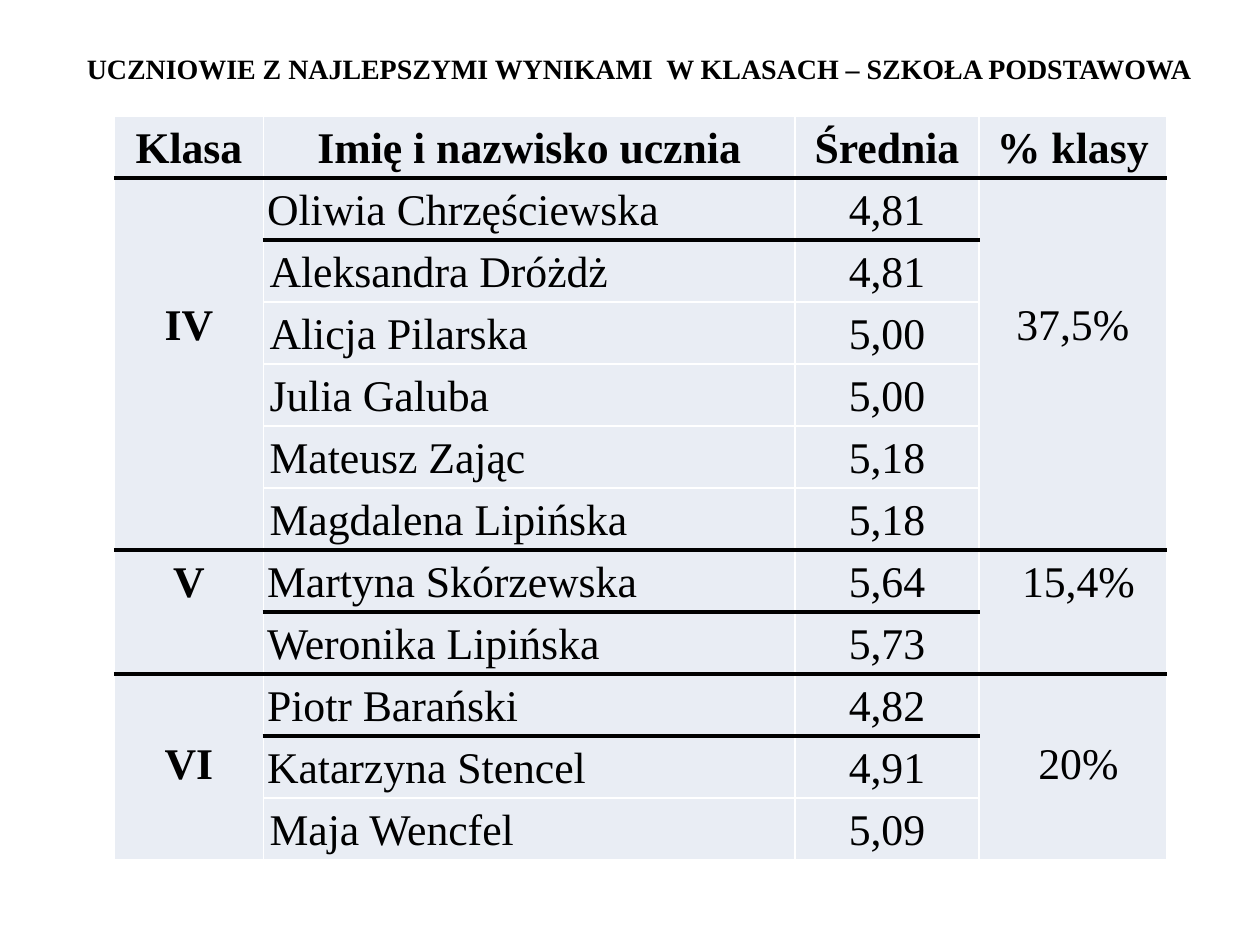
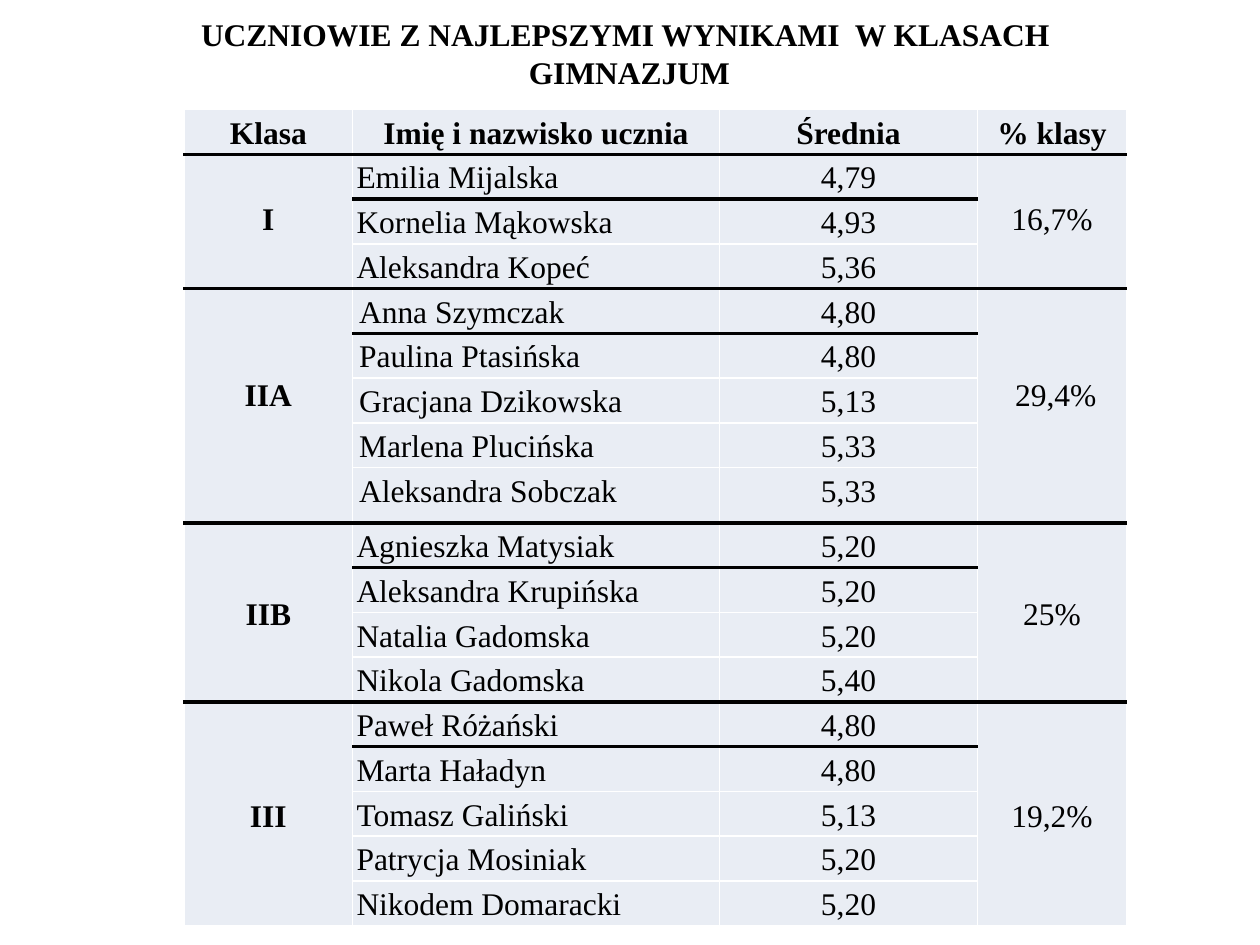
import dataclasses

import pptx
import pptx.dml.color
import pptx.enum.text
import pptx.oxml.ns
import pptx.util
from lxml import etree
from pptx.util import Inches, Pt

BLACK = pptx.dml.color.RGBColor(0x00, 0x00, 0x00)
WHITE = pptx.dml.color.RGBColor(0xFF, 0xFF, 0xFF)
CELL_FILL = pptx.dml.color.RGBColor(0xE9, 0xED, 0xF4)
FONT = "Times New Roman"
LINE_SPACING = 1.15
THIN, THICK = (WHITE, 1), (BLACK, 2.25)
HEADINGS = ["Klasa", "Imię i nazwisko ucznia", "Średnia", "% klasy"]
CENTER = pptx.enum.text.PP_ALIGN.CENTER
LEFT = pptx.enum.text.PP_ALIGN.LEFT
TOP = pptx.enum.text.MSO_ANCHOR.TOP
MIDDLE = pptx.enum.text.MSO_ANCHOR.MIDDLE


@dataclasses.dataclass
class SchoolClass:
    """One class; lines_above=None centres its label in the merged cell."""
    name: str
    percent: str
    students: list
    lines_above: int | None = None
    percent_shift: float = 0
    indented: range = range(0)


PRIMARY = [
    SchoolClass("IV", "37,5%", [
        ("Oliwia Chrzęściewska", "4,81"),
        ("Aleksandra Dróżdż", "4,81"),
        ("Alicja Pilarska", "5,00"),
        ("Julia Galuba", "5,00"),
        ("Mateusz Zając", "5,18"),
        ("Magdalena Lipińska", "5,18"),
    ], lines_above=2, indented=range(1, 6)),
    SchoolClass("V", "15,4%", [
        ("Martyna Skórzewska", "5,64"),
        ("Weronika Lipińska", "5,73"),
    ], lines_above=0, percent_shift=0.09),
    SchoolClass("VI", "20%", [
        ("Piotr Barański", "4,82"),
        ("Katarzyna Stencel", "4,91"),
        ("Maja Wencfel", "5,09"),
    ], lines_above=1, percent_shift=0.09, indented=range(2, 3)),
]

LOWER_SECONDARY = [
    SchoolClass("I", "16,7%", [
        ("Emilia Mijalska", "4,79"),
        ("Kornelia Mąkowska", "4,93"),
        ("Aleksandra Kopeć", "5,36"),
    ], lines_above=1),
    SchoolClass("IIA", "29,4%", [
        ("Anna Szymczak", "4,80"),
        ("Paulina Ptasińska", "4,80"),
        ("Gracjana Dzikowska", "5,13"),
        ("Marlena Plucińska", "5,33"),
        ("Aleksandra Sobczak", "5,33"),
    ], lines_above=2, percent_shift=0.06, indented=range(5)),
    SchoolClass("IIB", "25%", [
        ("Agnieszka Matysiak", "5,20"),
        ("Aleksandra Krupińska", "5,20"),
        ("Natalia Gadomska", "5,20"),
        ("Nikola Gadomska", "5,40"),
    ]),
    SchoolClass("III", "19,2%", [
        ("Paweł Różański", "4,80"),
        ("Marta Haładyn", "4,80"),
        ("Tomasz Galiński", "5,13"),
        ("Patrycja Mosiniak", "5,20"),
        ("Nikodem Domaracki", "5,20"),
    ]),
]


def add_span(para, text, size, bold):
    span = para.add_run()
    span.text = text
    span.font.name = FONT
    span.font.size = Pt(size)
    span.font.bold = bold
    span.font.color.rgb = BLACK


def add_title(page, lines, place, size):
    box = page.shapes.add_textbox(*map(Inches, place))
    frame = box.text_frame
    frame.word_wrap = True
    frame.auto_size = pptx.enum.text.MSO_AUTO_SIZE.SHAPE_TO_FIT_TEXT
    for index, line in enumerate(lines):
        para = frame.add_paragraph() if index else frame.paragraphs[0]
        para.alignment = CENTER
        add_span(para, line, size, True)


def style_cell(cell, top=THIN, bottom=THIN):
    """Draw the four borders, then fill the cell."""
    qn = pptx.oxml.ns.qn
    properties = cell._tc.get_or_add_tcPr()
    for side, (color, width) in zip("LRTB", (THIN, THIN, top, bottom)):
        line = etree.SubElement(properties, qn(f"a:ln{side}"), w=str(Pt(width)))
        fill = etree.SubElement(line, qn("a:solidFill"))
        etree.SubElement(fill, qn("a:srgbClr"), val=str(color))
    cell.fill.solid()
    cell.fill.fore_color.rgb = CELL_FILL


def write_cell(cell, text, size, bold=False, align=CENTER, anchor=TOP,
               side=0.03, above=0.01, shift=0):
    cell.margin_left = Inches(side + shift)
    cell.margin_right = Inches(side)
    cell.margin_top = Inches(above)
    cell.margin_bottom = 0
    cell.vertical_anchor = anchor
    para = cell.text_frame.paragraphs[0]
    para.alignment = align
    para.line_spacing = LINE_SPACING
    add_span(para, text, size, bold)


def add_merged_label(table, column, first, last, text, size, lines_above,
                     bottom, bold=False, shift=0):
    """Merge the rows of a class in one column and place its label."""
    table.cell(first, column).merge(table.cell(last, column))
    for row in range(first, last + 1):
        style_cell(table.cell(row, column),
                   THICK if row == first else THIN,
                   bottom if row in (first, last) else THIN)
    label = table.cell(first, column)
    if lines_above is None:
        write_cell(label, text, size, bold, anchor=MIDDLE, side=0, above=0)
    else:
        line_height = size * 1.15 * LINE_SPACING / 72
        write_cell(label, text, size, bold, shift=shift,
                   above=0.01 + lines_above * line_height)


def add_class(table, first, school_class, size, is_last_class):
    last = first + len(school_class.students) - 1
    closing = THIN if is_last_class else THICK
    for index, (student, average) in enumerate(school_class.students):
        row = first + index
        top = THICK if index < 2 else THIN
        bottom = THICK if index == 0 else closing if row == last else THIN
        side = 0.05 if index in school_class.indented else 0.03
        for column, text, align in ((1, student, LEFT), (2, average, CENTER)):
            cell = table.cell(row, column)
            style_cell(cell, top, bottom)
            write_cell(cell, text, size, align=align, side=side)
    add_merged_label(table, 0, first, last, school_class.name, size,
                     school_class.lines_above, closing, bold=True)
    add_merged_label(table, 3, first, last, school_class.percent, size,
                     school_class.lines_above, closing,
                     shift=school_class.percent_shift)


def add_results_table(page, classes, place, widths, size, tall_rows=None):
    """Add the table; tall_rows maps a row to its height, the rest are equal."""
    tall_rows = tall_rows or {}
    row_count = 1 + sum(len(school_class.students) for school_class in classes)
    table = page.shapes.add_table(row_count, len(HEADINGS),
                                  *map(Inches, place)).table
    table.first_row = table.horz_banding = False
    for column, width in zip(table.columns, widths):
        column.width = Inches(width)
    common = (place[3] - sum(tall_rows.values())) / (row_count - len(tall_rows))
    for index, row in enumerate(table.rows):
        row.height = Inches(tall_rows.get(index, common))
    for column, heading in enumerate(HEADINGS):
        style_cell(table.cell(0, column), bottom=THICK)
        write_cell(table.cell(0, column), heading, size, bold=True)
    first = 1
    for school_class in classes:
        add_class(table, first, school_class, size, school_class is classes[-1])
        first += len(school_class.students)


def main():
    deck = pptx.Presentation()
    deck.slide_width, deck.slide_height = Inches(10), Inches(7.5)
    blank = deck.slide_layouts[6]

    page = deck.slides.add_slide(blank)
    add_title(page, ["UCZNIOWIE Z NAJLEPSZYMI WYNIKAMI  W KLASACH – SZKOŁA PODSTAWOWA"],
              (0.31, 0.36, 9.53, 0.37), 16)
    add_results_table(page, PRIMARY, (0.91, 0.92, 8.35, 5.91),
                      (1.18, 4.22, 1.46, 1.49), 25)

    page = deck.slides.add_slide(blank)
    add_title(page, ["UCZNIOWIE Z NAJLEPSZYMI WYNIKAMI  W KLASACH ", "GIMNAZJUM"],
              (0.39, 0.07, 9.21, 0.71), 18)
    add_results_table(page, LOWER_SECONDARY, (1.46, 0.87, 7.48, 6.48),
                      (1.34, 2.91, 2.05, 1.18), 18, tall_rows={8: 0.44})

    deck.save("out.pptx")


if __name__ == "__main__":
    main()
